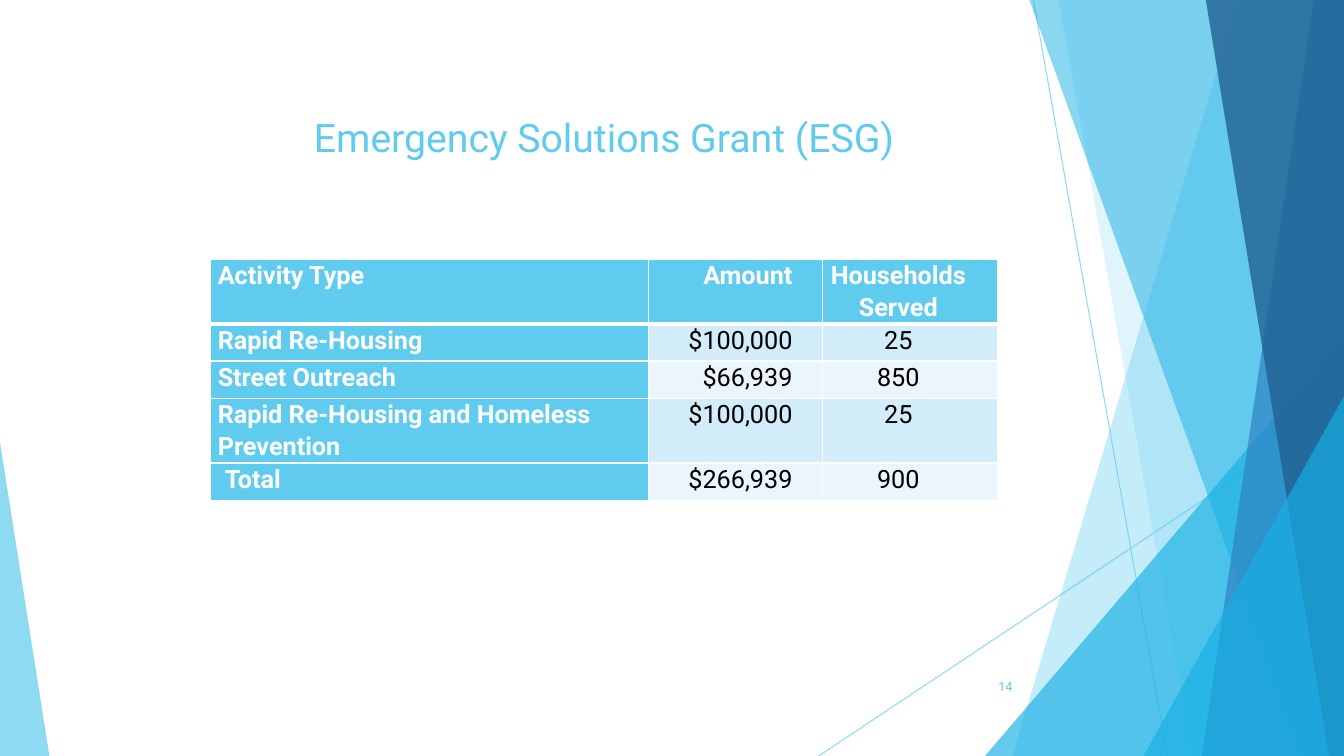
"""Build the Emergency Solutions Grant slide with its activity table."""
from lxml import etree
from pptx import Presentation
from pptx import util as u
from pptx.dml.color import RGBColor
from pptx.enum import shapes, text
from pptx.oxml import ns

SKY = RGBColor(0x5F, 0xCB, 0xEF)
CYAN = RGBColor(0x17, 0xB0, 0xE4)
BLUE = RGBColor(0x2E, 0x83, 0xC3)
NAVY = RGBColor(0x22, 0x62, 0x92)
PALE = RGBColor(0xD2, 0xEC, 0xF9)
PALER = RGBColor(0xEA, 0xF6, 0xFC)
WHITE = RGBColor(0xFF, 0xFF, 0xFF)
BLACK = RGBColor(0, 0, 0)
FONT = "Roboto"
WIDTH, HEIGHT = 13.33, 7.5

TITLE = "Emergency Solutions Grant (ESG)"
PAGE = "14"
ACTIVITIES = [
    ("Activity Type", "Amount", "Households Served"),
    ("Rapid Re-Housing", "$100,000", "25"),
    ("Street Outreach", "$66,939", "850"),
    ("Rapid Re-Housing and Homeless Prevention", "$100,000", "25"),
    ("Total", "$266,939", "900"),
]
COLUMN_WIDTHS = (4.34, 1.73, 1.73)
ROW_HEIGHTS = (0.63, 0.37, 0.37, 0.63, 0.37)
ALIGNMENTS = (text.PP_ALIGN.LEFT, text.PP_ALIGN.RIGHT, text.PP_ALIGN.CENTER)
RAYS = [((10.25, 0), (11.58, HEIGHT)), ((WIDTH, 4.03), (8.12, HEIGHT))]
FACETS = [
    ("band", (12.28, 10.04), SKY, 36),
    ("band", (10.5, 11.83), SKY, 20),
    ("triangle", (9.77, 3.33, 3.56, 1), CYAN, 66),
    ("band", (10.21, 12.91), CYAN, 50),
    ("band", (13.03, 11.92), BLUE, 70),
    ("band", (11.96, 13.18), NAVY, 80),
    ("triangle", (11.34, 3.93, 1.99, 1), CYAN, 66),
    ("triangle", (0, 4.39, 0.49, 0), SKY, 70),
]


def set_alpha(element, percent):
    color = element.find(".//" + ns.qn("a:srgbClr"))
    etree.SubElement(color, ns.qn("a:alpha")).set("val", str(percent * 1000))


def set_attributes(target, **values):
    for name, value in values.items():
        setattr(target, name, value)


def write(frame, words, size, color, align, spacing=1.0, bold=False):
    paragraph = frame.paragraphs[0]
    set_attributes(paragraph, alignment=align, line_spacing=spacing)
    run = paragraph.add_run()
    set_attributes(run, text=words)
    set_attributes(run.font, size=u.Pt(size), name=FONT, bold=bold)
    run.font.color.rgb = color


def add_ray(slide, start, end):
    ray = slide.shapes.add_connector(
        shapes.MSO_CONNECTOR.STRAIGHT, *map(u.Inches, start + end))
    ray.line.color.rgb = SKY
    ray.line.width = u.Pt(0.75)
    properties = ray.element.spPr
    set_alpha(properties, 70)
    etree.SubElement(properties, ns.qn("a:effectLst"))


def add_facet(slide, kind, geometry, color, alpha):
    if kind == "band":
        top, bottom = geometry
        corners = [(WIDTH, 0), (WIDTH, HEIGHT), (bottom, HEIGHT)]
        builder = slide.shapes.build_freeform(u.Inches(top), 0)
        builder.add_line_segments(
            [(u.Inches(x), u.Inches(y)) for x, y in corners], close=True)
        facet = builder.convert_to_shape()
    else:
        left, top, width, apex = geometry
        facet = slide.shapes.add_shape(
            shapes.MSO_SHAPE.ISOSCELES_TRIANGLE,
            *map(u.Inches, (left, top, width, HEIGHT - top)))
        facet.adjustments[0] = apex
    facet.shadow.inherit = False
    facet.fill.solid()
    facet.fill.fore_color.rgb = color
    facet.line.fill.background()
    set_alpha(facet.element.spPr, alpha)


def add_borders(cell, row):
    heavy = {(0, "B"), (1, "T")}
    properties = cell._tc.get_or_add_tcPr()
    for side in "LRTB":
        points = 3 if (row, side) in heavy else 1
        border = etree.SubElement(properties, ns.qn("a:ln" + side), w=str(u.Pt(points)))
        fill = etree.SubElement(border, ns.qn("a:solidFill"))
        etree.SubElement(fill, ns.qn("a:srgbClr"), val=str(WHITE))


def add_activity_table(slide):
    table = slide.shapes.add_table(
        len(ROW_HEIGHTS), len(COLUMN_WIDTHS), u.Inches(2.09), u.Inches(2.57),
        u.Inches(sum(COLUMN_WIDTHS)), u.Inches(sum(ROW_HEIGHTS))).table
    for column, width in zip(table.columns, COLUMN_WIDTHS):
        column.width = u.Inches(width)
    for r, (activity, height) in enumerate(zip(ACTIVITIES, ROW_HEIGHTS)):
        table.rows[r].height = u.Inches(height)
        for c, words in enumerate(activity):
            cell = table.cell(r, c)
            accent = r == 0 or c == 0
            set_attributes(
                cell, margin_top=0, margin_bottom=0,
                margin_left=u.Inches(0.14 if words == "Total" else 0.07),
                margin_right=u.Inches(0.3 if c else 0.07))
            add_borders(cell, r)
            cell.fill.solid()
            cell.fill.fore_color.rgb = SKY if accent else (PALER, PALE)[r % 2]
            write(cell.text_frame, words, 18, WHITE if accent else BLACK,
                  ALIGNMENTS[c], 1.07, accent)


def main():
    deck = Presentation()
    set_attributes(deck, slide_width=u.Inches(WIDTH), slide_height=u.Inches(HEIGHT))
    slide = deck.slides.add_slide(deck.slide_layouts[5])
    for start, end in RAYS:
        add_ray(slide, start, end)
    for facet in FACETS:
        add_facet(slide, *facet)

    title = slide.shapes.title
    title.element.getparent().append(title.element)
    set_attributes(title, left=u.Inches(0.74), top=u.Inches(0.67),
                   width=u.Inches(10.5), height=u.Inches(1.44))
    title.text_frame.vertical_anchor = text.MSO_ANCHOR.MIDDLE
    write(title.text_frame, TITLE, 28, SKY, text.PP_ALIGN.CENTER, 0.9)

    page = slide.shapes.add_textbox(*map(u.Inches, (9.39, 6.61, 0.75, 0.4)))
    set_attributes(page.text_frame, word_wrap=True,
                   vertical_anchor=text.MSO_ANCHOR.MIDDLE)
    write(page.text_frame, PAGE, 9, SKY, text.PP_ALIGN.RIGHT)

    add_activity_table(slide)
    deck.save("out.pptx")


if __name__ == "__main__":
    main()
